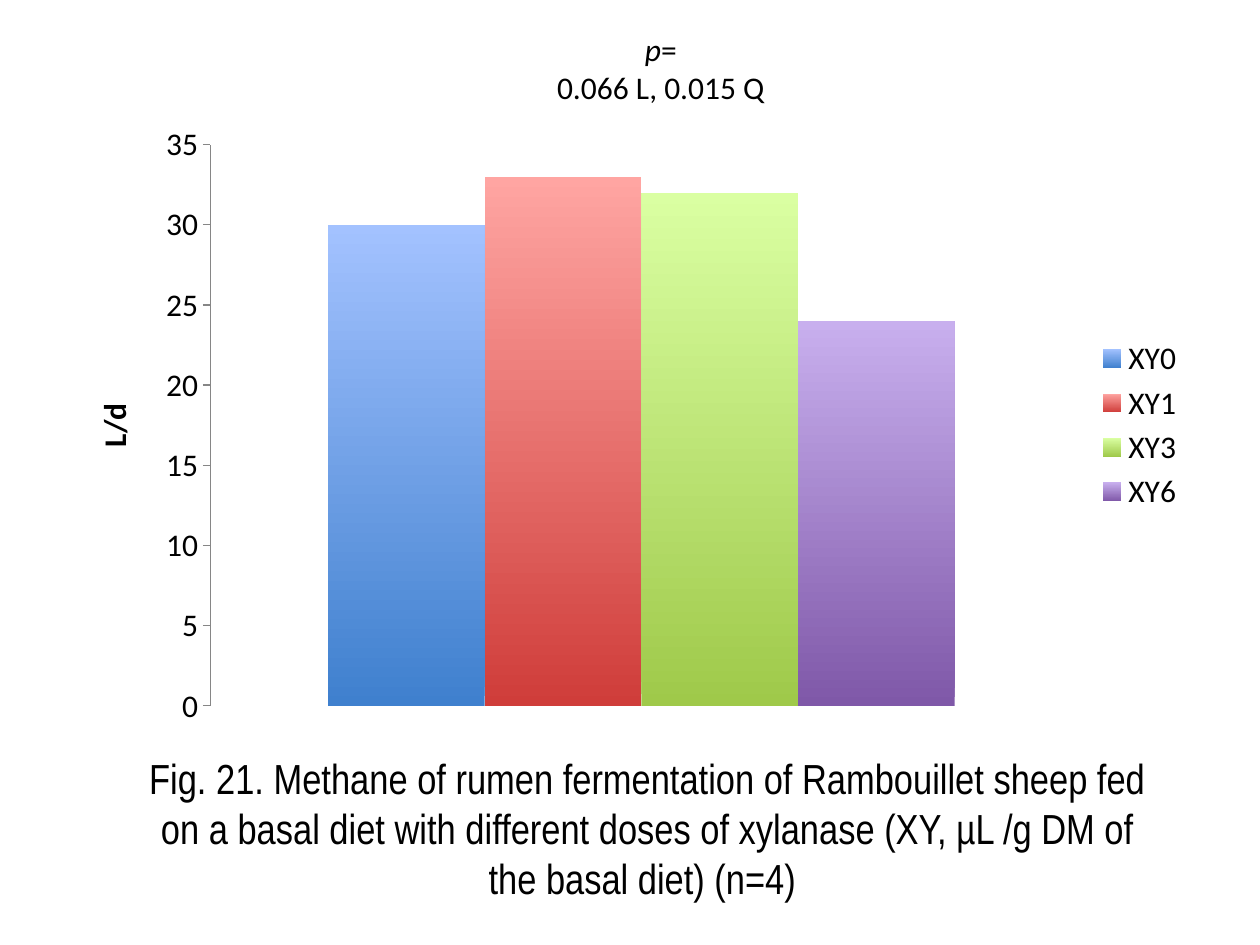
import dataclasses

import pptx
import pptx.chart.data
import pptx.dml.color
import pptx.enum.chart
import pptx.enum.text
import pptx.util
from lxml import etree


@dataclasses.dataclass(frozen=True)
class Theme:
    body: str = "Calibri"
    caption: str = "Arial Narrow"
    ink: str = "000000"
    axis: str = "868686"
    body_size: int = 18
    caption_size: int = 24
    # (bottom, top) of each column's gradient
    columns: tuple = (("3F80CE", "A3C2FF"), ("CF3D3A", "FFA5A2"),
                      ("9FC94A", "DAFFA2"), ("7F58A8", "C8AFEE"))


def rgb(value):
    return pptx.dml.color.RGBColor.from_string(value)


def style_font(font, name, size, color, bold=False, italic=False):
    font.name, font.size = name, pptx.util.Pt(size)
    font.bold, font.italic = bold, italic
    font.color.rgb = rgb(color)


def add_text(p, text, **fmt):
    r = p.add_run()
    r.text = text
    style_font(r.font, **fmt)


def set_plot_area(chart, **shares):
    """Fix the inner plot area, given as shares of the chart's size."""
    plot_area = chart.plots[0]._element.getparent()
    ns = etree.QName(plot_area).namespace
    for old in plot_area.findall(f"{{{ns}}}layout"):
        plot_area.remove(old)
    layout = etree.Element(f"{{{ns}}}layout")
    manual = etree.SubElement(layout, f"{{{ns}}}manualLayout")
    settings = dict(layoutTarget="inner", xMode="edge", yMode="edge", **shares)
    for tag, value in settings.items():
        etree.SubElement(manual, f"{{{ns}}}{tag}").set("val", str(value))
    plot_area.insert(0, layout)


class SlideBuilder:
    """Places elements by (left, top, width, height) in percent of the slide."""

    def __init__(self, prs, theme):
        self.prs, self.theme = prs, theme
        self.s = prs.slides.add_slide(prs.slide_layouts[6])

    def box(self, left, top, width, height):
        w, h = self.prs.slide_width, self.prs.slide_height
        return [int(share * full / 100) for share, full in
                ((left, w), (top, h), (width, w), (height, h))]

    def text(self, place, paragraphs, name, size):
        """Each paragraph is a list of (text, italic) runs."""
        tf = self.s.shapes.add_textbox(*self.box(*place)).text_frame
        tf.word_wrap = True
        tf.auto_size = pptx.enum.text.MSO_AUTO_SIZE.SHAPE_TO_FIT_TEXT
        for i, runs in enumerate(paragraphs):
            p = tf.add_paragraph() if i else tf.paragraphs[0]
            p.alignment = pptx.enum.text.PP_ALIGN.CENTER
            for text, italic in runs:
                add_text(p, text, name=name, size=size,
                         color=self.theme.ink, italic=italic)

    def column_chart(self, place, series, unit, top_value, step):
        t = self.theme
        data = pptx.chart.data.CategoryChartData()
        data.categories = ["1"]
        for name, value in series.items():
            data.add_series(name, [value])
        chart = self.s.shapes.add_chart(
            pptx.enum.chart.XL_CHART_TYPE.COLUMN_CLUSTERED,
            *self.box(*place), data).chart
        style_font(chart.font, t.body, t.body_size, t.ink)
        chart.has_title = False
        chart.has_legend = True
        chart.legend.position = pptx.enum.chart.XL_LEGEND_POSITION.RIGHT
        chart.legend.include_in_layout = False

        plot = chart.plots[0]
        plot.gap_width, plot.overlap = 150, 0
        plot.vary_by_categories = False
        for ser, colors in zip(plot.series, t.columns):
            fill = ser.format.fill
            fill.gradient()
            fill.gradient_angle = 90
            for stop, color in zip(fill.gradient_stops, colors):
                stop.color.rgb = rgb(color)

        chart.category_axis.visible = False
        axis = chart.value_axis
        axis.has_major_gridlines = False
        axis.minimum_scale, axis.maximum_scale = 0, top_value
        axis.major_unit = step
        axis.format.line.color.rgb = rgb(t.axis)
        add_text(axis.axis_title.text_frame.paragraphs[0], unit, name=t.body,
                 size=t.body_size, color=t.ink, bold=True)
        set_plot_area(chart, x=0.13, y=0.05, w=0.76, h=0.9)


def main():
    prs = pptx.Presentation()
    prs.slide_width, prs.slide_height = pptx.util.Inches(10), pptx.util.Inches(7.5)
    theme = Theme()
    slide = SlideBuilder(prs, theme)
    slide.column_chart((5, 12, 90, 66),
                       {"XY0": 30, "XY1": 33, "XY3": 32, "XY6": 24},
                       unit="L/d", top_value=35, step=5)
    slide.text((9.7, 78.93, 83.3, 17.47),
               [[("Fig. 21. Methane of rumen fermentation of Rambouillet sheep "
                  "fed on a basal diet with different doses of xylanase "
                  "(XY, µL /g DM of the basal diet) (n=4) ", False)]],
               theme.caption, theme.caption_size)
    slide.text((37.8, 2.53, 29.3, 9.47),
               [[("p", True), ("=", False)], [("0.066 L, 0.015 Q", False)]],
               theme.body, theme.body_size)
    prs.save("out.pptx")


if __name__ == "__main__":
    main()
